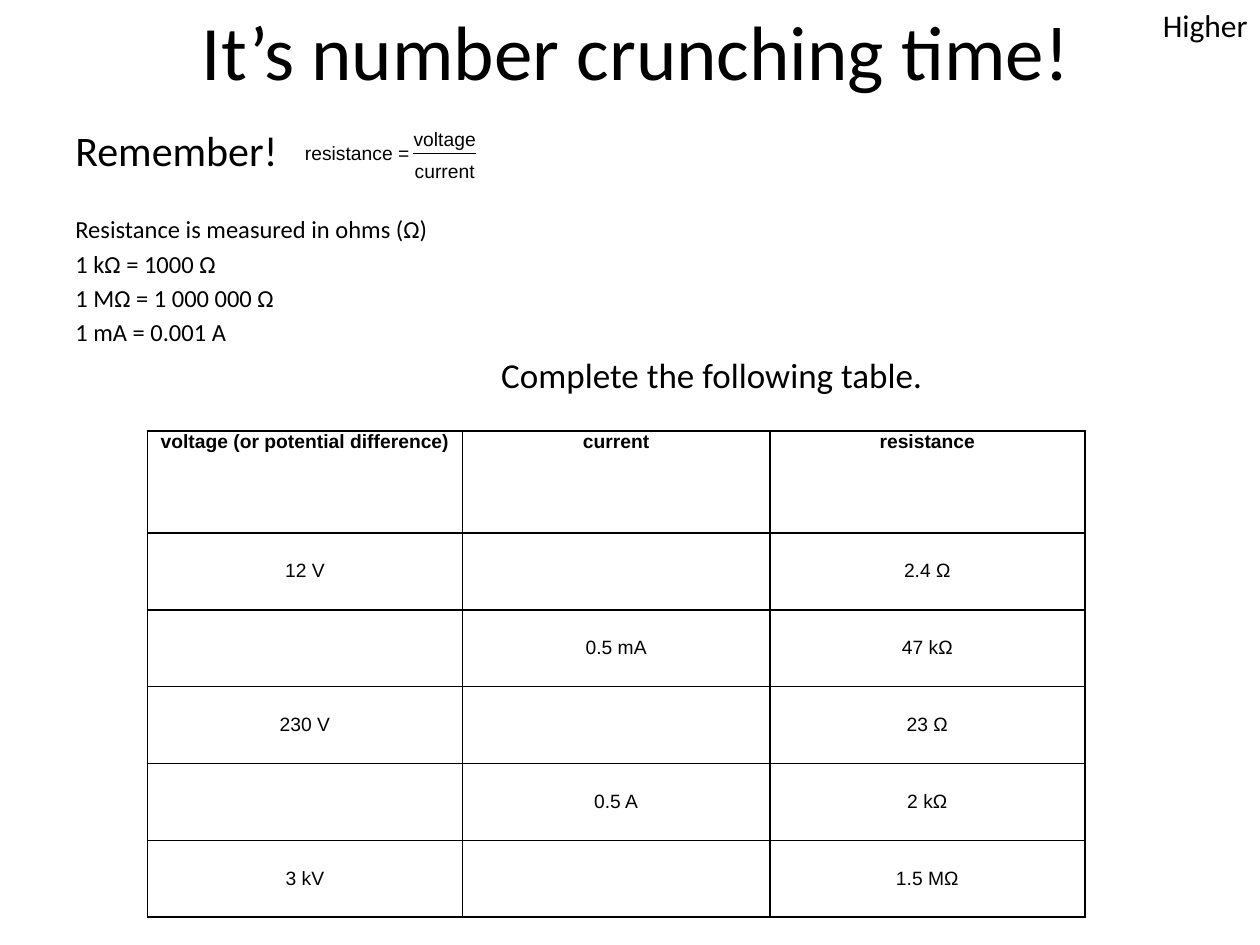
from dataclasses import dataclass

from lxml import etree
from pptx import Presentation
from pptx.dml.color import RGBColor
from pptx.enum.shapes import MSO_CONNECTOR as Connector
from pptx.enum.text import MSO_ANCHOR as Anchor, PP_ALIGN as Align
from pptx.oxml.ns import qn
from pptx.util import Inches, Pt


@dataclass(frozen=True)
class Theme:
    black: RGBColor = RGBColor(0, 0, 0)
    white: RGBColor = RGBColor(255, 255, 255)
    main_font: str = "Calibri"
    data_font: str = "Arial"
    title: int = 44
    heading: int = 24
    task: int = 20
    label: int = 18
    body: int = 14
    data: int = 11


THEME = Theme()
READINGS = [
    ("voltage (or potential difference)", "current", "resistance"),
    ("12 V", "", "2.4 Ω"),
    ("", "0.5 mA", "47 kΩ"),
    ("230 V", "", "23 Ω"),
    ("", "0.5 A", "2 kΩ"),
    ("3 kV", "", "1.5 MΩ"),
]


def set_all(target, values):
    for name, value in values.items():
        setattr(target, name, value)


def write(paragraph, text, size, font=THEME.main_font, bold=False, **layout):
    """Fill one paragraph; layout holds paragraph attributes."""
    paragraph.text = text
    set_all(paragraph, layout)
    set_all(paragraph.font, {"name": font, "size": Pt(size), "bold": bold})
    paragraph.font.color.rgb = THEME.black


def add_box(shapes, box, inset=None, **frame_format):
    """Add a text box at (left, top, width, height) inches; return its frame."""
    frame = shapes.add_textbox(*map(Inches, box)).text_frame
    set_all(frame, {"word_wrap": True, **frame_format})
    if inset is not None:
        sides = ("left", "top", "right", "bottom")
        set_all(frame, {f"margin_{side}": Inches(inset) for side in sides})
    return frame


def add_title(slide, box):
    frame = add_box(slide.shapes, box, vertical_anchor=Anchor.MIDDLE)
    write(frame.paragraphs[0], "It’s number crunching time!", THEME.title,
          alignment=Align.CENTER)


def add_level(slide, box):
    frame = add_box(slide.shapes, box)
    write(frame.paragraphs[0], "Higher", THEME.label, alignment=Align.RIGHT)


def add_reminders(slide, box):
    frame = add_box(slide.shapes, box)
    write(frame.paragraphs[0], "Remember!", THEME.heading)
    facts = ["Resistance is measured in ohms (Ω)", "1 kΩ = 1000 Ω",
             "1 MΩ = 1 000 000 Ω", "1 mA = 0.001 A"]
    for index, fact in enumerate(facts):
        write(frame.add_paragraph(), fact, THEME.body,
              space_before=Pt(2.8 if index else 22.5))
    task = frame.add_paragraph()
    task_format = task._p.get_or_add_pPr()
    task_format.set("marL", str(Inches(3.38)))
    task_format.set("indent", "0")
    write(task, "Complete the following table.", THEME.task, space_before=Pt(4))


def add_formula(slide, box):
    """Draw resistance = voltage / current, with the fraction at the right."""
    left, top, width, height = box
    fraction_width = 0.5
    fraction_left = left + width - fraction_width
    shapes = slide.shapes.add_group_shape().shapes
    layout = {"line_spacing": 0.96, "space_after": Pt(6)}

    name = add_box(shapes, (left, top + 0.11, 0.96, 0.16), inset=0)
    write(name.paragraphs[0], "resistance =", THEME.data, THEME.data_font, **layout)

    fraction = add_box(shapes, (fraction_left, top, fraction_width, height),
                       inset=0, word_wrap=False)
    for paragraph, term in ((fraction.paragraphs[0], "voltage"),
                            (fraction.add_paragraph(), "current")):
        write(paragraph, term, THEME.data, THEME.data_font,
              alignment=Align.CENTER, **layout)

    bar_top = Inches(top + 0.2)
    bar = shapes.add_connector(Connector.STRAIGHT, Inches(fraction_left), bar_top,
                               Inches(left + width), bar_top)
    bar.line.color.rgb = THEME.black
    bar.line.width = Pt(0.75)
    etree.SubElement(bar._element.spPr, qn("a:effectLst"))


def add_borders(cell):
    properties = cell._tc.get_or_add_tcPr()
    for index, side in enumerate(("lnL", "lnR", "lnT", "lnB")):
        line = etree.Element(qn(f"a:{side}"), w=str(Pt(1)))
        fill = etree.SubElement(line, qn("a:solidFill"))
        etree.SubElement(fill, qn("a:srgbClr"), val=str(THEME.black))
        properties.insert(index, line)


def add_readings(slide, box):
    shape = slide.shapes.add_table(len(READINGS), len(READINGS[0]), *map(Inches, box))
    table = shape.table
    set_all(table, {"first_row": False, "horz_banding": False})
    for column, width in zip(table.columns, (2.5, 2.44, 2.5)):
        column.width = Inches(width)
    for row_index, values in enumerate(READINGS):
        header = row_index == 0
        table.rows[row_index].height = Inches(0.81 if header else 0.61)
        for column_index, value in enumerate(values):
            cell = table.cell(row_index, column_index)
            set_all(cell, {
                "margin_left": Inches(0.07), "margin_right": Inches(0.07),
                "margin_top": 0, "margin_bottom": 0,
                "vertical_anchor": Anchor.TOP if header else Anchor.MIDDLE,
            })
            cell.fill.background()
            add_borders(cell)
            write(cell.text_frame.paragraphs[0], value, THEME.data, THEME.data_font,
                  bold=header, alignment=Align.CENTER,
                  line_spacing=None if header else Pt(12))


def main():
    presentation = Presentation()
    set_all(presentation, {"slide_width": Inches(10), "slide_height": Inches(7.5)})
    slide = presentation.slides.add_slide(presentation.slide_layouts[6])
    slide.background.fill.solid()
    slide.background.fill.fore_color.rgb = THEME.white
    add_title(slide, (0.55, -0.23, 9, 1.25))
    add_reminders(slide, (0.5, 0.94, 9, 5.76))
    add_formula(slide, (2.42, 1.02, 1.36, 0.58))
    add_readings(slide, (1.17, 3.42, 7.44, 3.86))
    add_level(slide, (8.75, 0, 1.25, 0.4))
    presentation.save("out.pptx")


if __name__ == "__main__":
    main()
